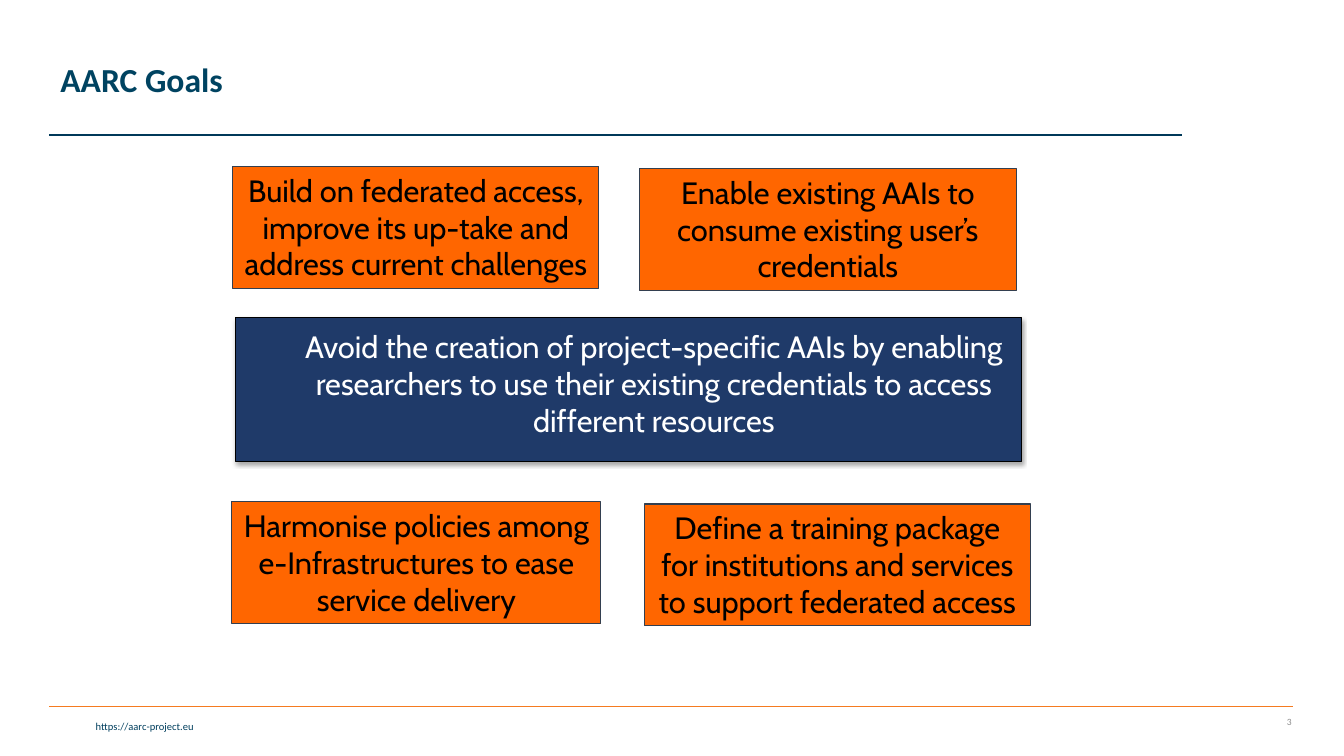
"""Build the AARC goals slide."""
from dataclasses import dataclass

from lxml import etree
from pptx import Presentation, util as u
from pptx.dml.color import RGBColor
from pptx.enum import shapes, text
from pptx.oxml.ns import qn


@dataclass(frozen=True)
class Theme:
    """Colours, fonts and type sizes of the slide."""
    title: str = "004361"
    rule: str = "003959"
    accent: str = "F57B20"
    link: str = "003F5E"
    number: str = "8C8C8C"
    goal: str = "FF6600"
    goal_edge: str = "333F50"
    focus: str = "1F3A69"
    black: str = "000000"
    white: str = "FFFFFF"
    head_font: str = "Calibri"
    body_font: str = "Cabin"
    title_size: float = 24
    body_size: float = 22
    link_size: float = 7.5
    number_size: float = 6.8


def write(sp, words, *, font, size, color, bold=False, align=text.PP_ALIGN.LEFT,
          anchor=text.MSO_ANCHOR.TOP, spacing=None, grow=False):
    """Put one formatted paragraph into a shape and return its text frame."""
    tf = sp.text_frame
    tf.word_wrap = True
    tf.vertical_anchor = anchor
    tf.auto_size = text.MSO_AUTO_SIZE.SHAPE_TO_FIT_TEXT if grow else text.MSO_AUTO_SIZE.NONE
    p = tf.paragraphs[0]
    p.alignment = align
    if spacing:
        p.line_spacing = spacing
    r = p.add_run()
    r.text = words
    r.font.name, r.font.size, r.font.bold = font, u.Pt(size), bold
    r.font.color.rgb = RGBColor.from_string(color)
    return tf


class GoalSlide:
    """Hold the theme and the current slide, and draw its elements."""

    def __init__(self, prs, theme):
        """Add a blank slide to the presentation."""
        self.theme = theme
        self.s = prs.slides.add_slide(prs.slide_layouts[6])

    def rule(self, left, right, y, color):
        """Draw a horizontal line."""
        sp = self.s.shapes.add_connector(
            shapes.MSO_CONNECTOR.STRAIGHT, *map(u.Inches, (left, y, right, y)))
        sp.line.color.rgb = RGBColor.from_string(color)
        sp.line.width = u.Pt(1)
        etree.SubElement(sp._element.spPr, qn("a:effectLst"))

    def label(self, box, words, **style):
        """Add a text box."""
        sp = self.s.shapes.add_textbox(*map(u.Inches, box))
        write(sp, words, font=self.theme.head_font, **style)

    def panel(self, box, words, fill, edge, color, grow=False):
        """Add a filled rectangle with centred text."""
        sp = self.s.shapes.add_shape(shapes.MSO_SHAPE.RECTANGLE, *map(u.Inches, box))
        sp.shadow.inherit = False
        sp.fill.solid()
        sp.fill.fore_color.rgb = RGBColor.from_string(fill)
        sp.line.color.rgb = RGBColor.from_string(edge)
        sp.line.width = u.Pt(0.75)
        write(sp, words, font=self.theme.body_font, size=self.theme.body_size,
              color=color, align=text.PP_ALIGN.CENTER, grow=grow)
        return sp

    def goal(self, box, words):
        """Add an orange goal box."""
        t = self.theme
        self.panel(box, words, t.goal, t.goal_edge, t.black, grow=True)

    def focus(self, box, words):
        """Add the blue central box with a soft shadow."""
        t = self.theme
        sp = self.panel(box, words, t.focus, t.black, t.white)
        tf = sp.text_frame
        tf.margin_left = tf.margin_right = tf.margin_bottom = u.Inches(0.07)
        tf.margin_top = u.Inches(0.1)
        pPr = tf.paragraphs[0]._p.get_or_add_pPr()
        pPr.set("marL", str(u.Inches(0.5)))
        pPr.set("indent", "0")
        effects = sp._element.spPr.find(qn("a:effectLst"))
        shadow = etree.SubElement(
            effects, qn("a:outerShdw"), blurRad=str(u.Pt(3.1)), dist=str(u.Pt(1.8)),
            dir="5400000", rotWithShape="0")
        shade = etree.SubElement(shadow, qn("a:srgbClr"), val=t.black)
        etree.SubElement(shade, qn("a:alpha"), val="35000")


def main():
    """Build and save the slide."""
    prs = Presentation()
    prs.slide_width, prs.slide_height = u.Inches(13.33), u.Inches(7.5)
    t = Theme()
    page = GoalSlide(prs, t)

    page.rule(0.49, 12.82, 7.01, t.accent)
    page.label((0.03, 7.09, 1.99, 0.23), "https://aarc-project.eu",
               size=t.link_size, color=t.link, align=text.PP_ALIGN.RIGHT, grow=True)
    page.rule(0.49, 11.72, 1.34, t.rule)
    page.label((12.1, 7.01, 0.81, 0.3), "3", size=t.number_size, color=t.number,
               align=text.PP_ALIGN.RIGHT, anchor=text.MSO_ANCHOR.MIDDLE)
    page.label((0.5, 0.08, 10.51, 1.45), "AARC Goals", size=t.title_size,
               color=t.title, bold=True, anchor=text.MSO_ANCHOR.MIDDLE, spacing=0.9)

    goals = [
        (2.31, 1.65, 3.63,
         "Build on federated access, improve its up-take and address current challenges"),
        (2.3, 4.98, 3.66,
         "Harmonise policies among e-Infrastructures to ease service delivery"),
        (6.39, 5, 3.83,
         "Define a training package for institutions and services to support federated access"),
        (6.34, 1.67, 3.74, "Enable existing AAIs to consume existing user’s credentials"),
    ]
    for left, top, width, words in goals:
        page.goal((left, top, width, 1.21), words)
    page.focus((2.34, 3.15, 7.79, 1.43),
               "Avoid the creation of project-specific AAIs by enabling researchers "
               "to use their existing credentials to access different resources")

    prs.save("out.pptx")


if __name__ == "__main__":
    main()
